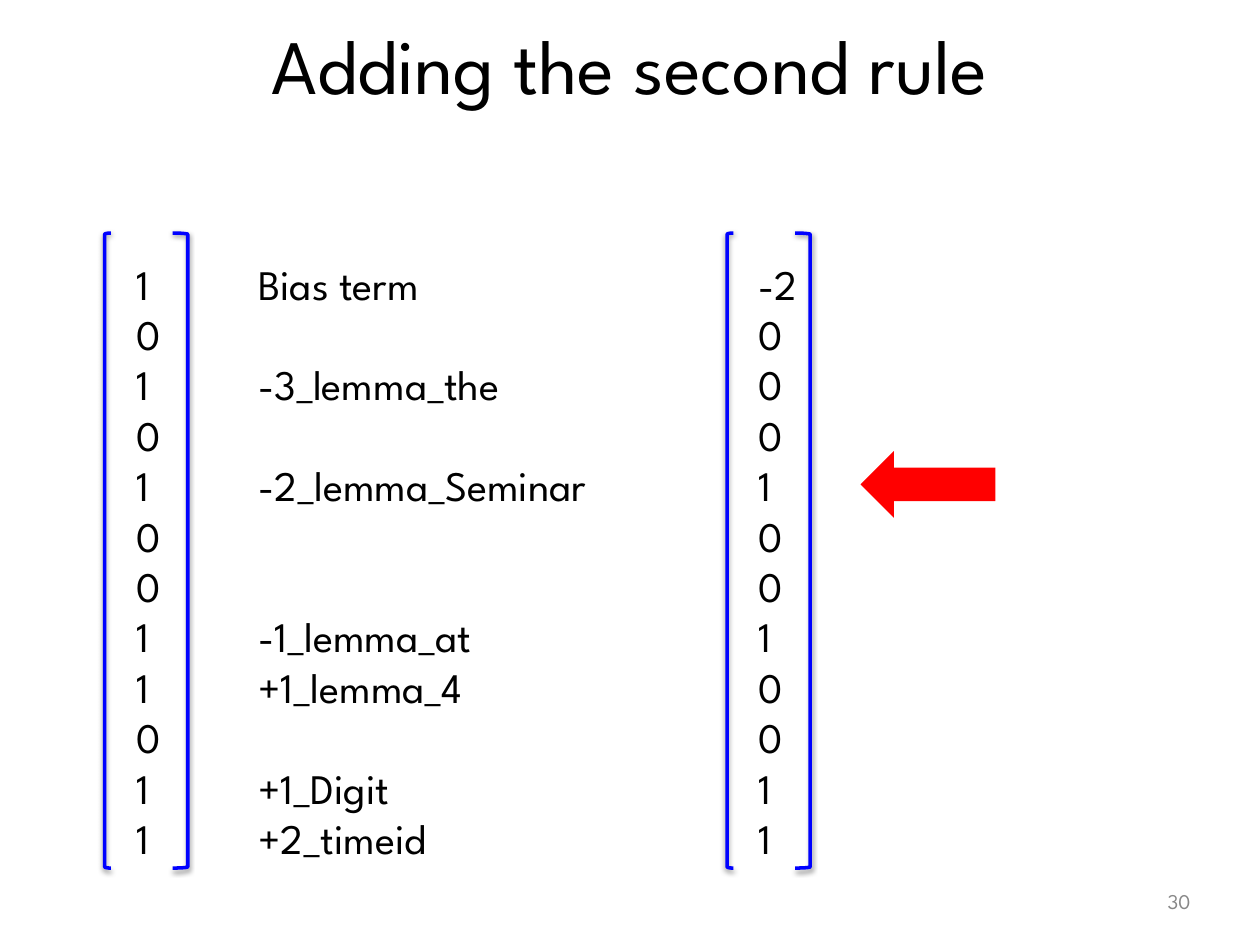
from lxml.etree import SubElement
from pptx import Presentation
from pptx.dml.color import RGBColor
from pptx.enum.shapes import MSO_SHAPE as SHAPE
from pptx.enum.text import MSO_ANCHOR as ANCHOR, MSO_AUTO_SIZE as AUTO, PP_ALIGN as ALIGN
from pptx.oxml.ns import qn
from pptx.util import Inches, Pt

FONT = "League Spartan"
BLACK = RGBColor(0, 0, 0)
GREY = RGBColor(0x88, 0x88, 0x88)
BLUE = RGBColor(0x00, 0x01, 0xFF)
RED = RGBColor(0xFF, 0, 0)

ROW_PITCH = 28.8  # points from one 24 pt line to the next
TEXT_TOP, TEXT_H = 2, 4.93
BRACKET_TOP, BRACKET_H, CORNER = 1.85, 5.04, 0.01

FEATURES = [1, 0, 1, 0, 1, 0, 0, 1, 1, 0, 1, 1]
WEIGHTS = [-2, 0, 0, 0, 1, 0, 0, 1, 0, 0, 1, 1]
LABELS = {0: "Bias term", 2: "-3_lemma_the", 4: "-2_lemma_Seminar", 7: "-1_lemma_at",
          8: "+1_lemma_4", 10: "+1_Digit", 11: "+2_timeid"}


def set_attrs(obj, values):
    for name, value in values.items():
        setattr(obj, name, value)


def inches(*lengths):
    return [Inches(n) for n in lengths]


def write_rows(sp, rows, size, color=BLACK, align=ALIGN.LEFT, **frame):
    """Write {row number: text}, leaving space for the row numbers not given."""
    tf = sp.text_frame
    sides = ("left", "top", "right", "bottom")
    set_attrs(tf, {f"margin_{side}": Inches(0.05) for side in sides} | frame)
    following = 0
    for row, text in rows.items():
        p = tf.add_paragraph() if following else tf.paragraphs[0]
        set_attrs(p, {"alignment": align, "space_before": Pt((row - following) * ROW_PITCH)})
        r = p.add_run()
        r.text = text
        set_attrs(r.font, {"name": FONT, "size": Pt(size)})
        r.font.color.rgb = color
        following = row + 1


def add_text(slide, box, rows, size=24, wrap=False, **style):
    sp = slide.shapes.add_textbox(*inches(*box))
    write_rows(sp, rows, size, word_wrap=wrap, auto_size=AUTO.SHAPE_TO_FIT_TEXT, **style)


def add_plain_shape(slide, kind, box):
    sp = slide.shapes.add_shape(kind, *inches(*box))
    sp.shadow.inherit = False
    return sp


def add_soft_shadow(sp):
    effects = sp._element.spPr.find(qn("a:effectLst"))
    shadow = SubElement(effects, qn("a:outerShdw"), blurRad=str(Pt(3)), dist=str(Pt(1.6)),
                        dir="5400000", rotWithShape="0")
    color = SubElement(shadow, qn("a:srgbClr"), val="000000")
    SubElement(color, qn("a:alpha"), val="38000")


def add_bracket(slide, kind, left, width):
    sp = add_plain_shape(slide, kind, (left, BRACKET_TOP, width, BRACKET_H))
    sp.adjustments[0] = CORNER / width
    sp.fill.background()
    sp.line.color.rgb = BLUE
    sp.line.width = Pt(2)
    add_soft_shadow(sp)


def add_vector(slide, left, values, text_width):
    add_bracket(slide, SHAPE.LEFT_BRACKET, left, 0.05)
    add_bracket(slide, SHAPE.RIGHT_BRACKET, left + 0.54, 0.12)
    rows = {row: str(value) for row, value in enumerate(values)}
    add_text(slide, (left + 0.2, TEXT_TOP, text_width, TEXT_H), rows)


def add_title(slide, text):
    sp = slide.shapes.title
    set_attrs(sp, dict(zip(("left", "top", "width", "height"), inches(0.5, 0, 9, 1.01))))
    write_rows(sp, {0: text}, 44, align=ALIGN.CENTER, vertical_anchor=ANCHOR.MIDDLE)


def add_arrow(slide, box):
    sp = add_plain_shape(slide, SHAPE.LEFT_ARROW, box)
    sp.fill.solid()
    sp.fill.fore_color.rgb = RED
    sp.line.fill.background()


def main():
    prs = Presentation()
    prs.slide_width, prs.slide_height = inches(10, 7.5)
    slide = prs.slides.add_slide(prs.slide_layouts[5])
    add_title(slide, "Adding the second rule")
    add_text(slide, (9.2, 7, 0.3, 0.31), {0: "30"}, 12, color=GREY, align=ALIGN.RIGHT,
             vertical_anchor=ANCHOR.MIDDLE)
    add_vector(slide, 0.83, FEATURES, 0.3)
    add_text(slide, (2, TEXT_TOP, 3.26, TEXT_H), LABELS, wrap=True)
    add_vector(slide, 5.77, WEIGHTS, 0.41)
    add_arrow(slide, (6.83, 3.58, 1.07, 0.53))
    prs.save("out.pptx")


if __name__ == "__main__":
    main()
